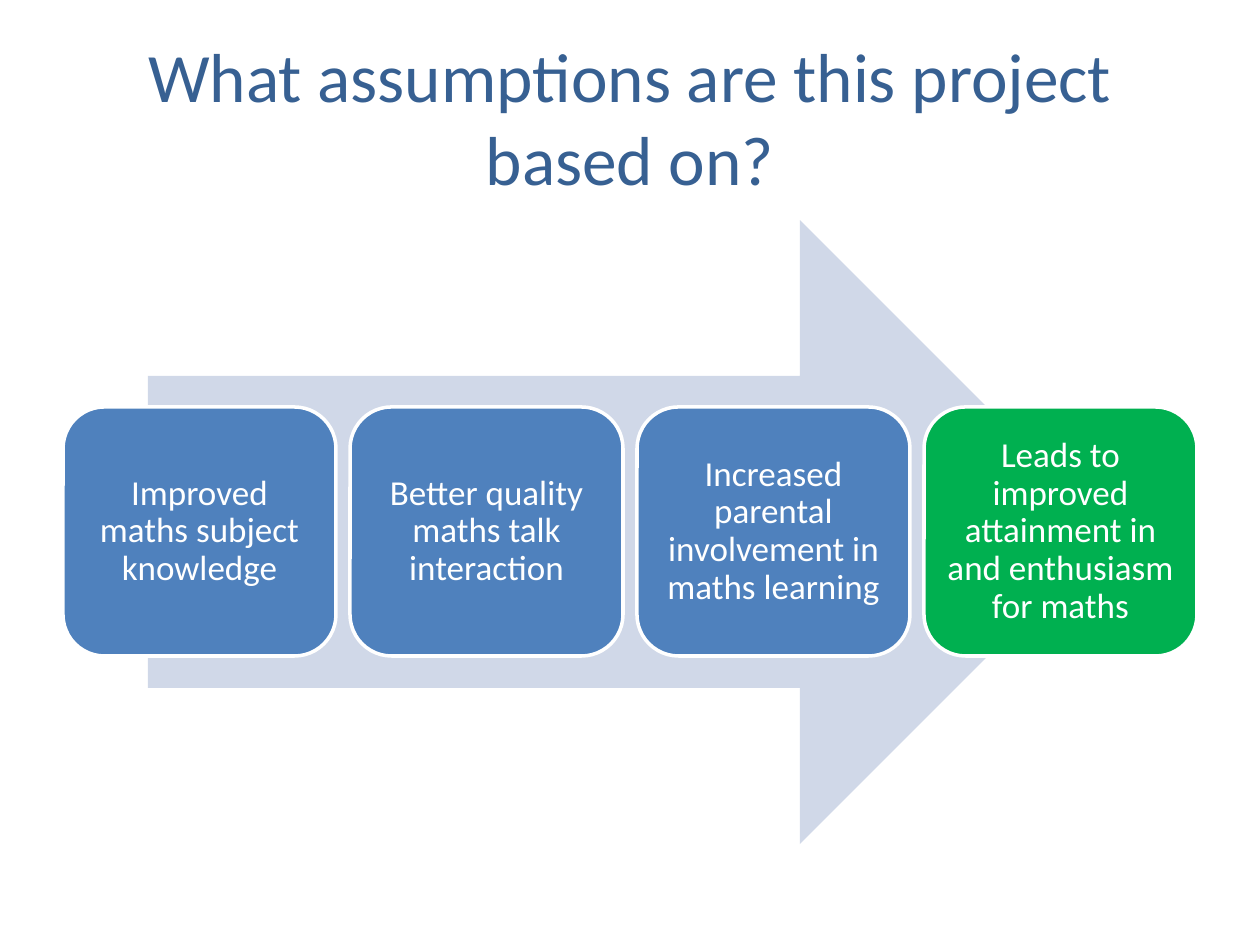
from dataclasses import dataclass

from pptx import Presentation
from pptx.dml.color import RGBColor
from pptx.enum.shapes import MSO_SHAPE as Shape
from pptx.enum.text import MSO_ANCHOR as Anchor, PP_ALIGN as Align
from pptx.util import Emu, Pt

EMU_PER_PX = 914400 / 126


@dataclass(frozen=True)
class Theme:
    font: str = "Calibri"
    title_size: float = 39.6
    step_size: float = 20
    outline_width: float = 2
    title: str = "376092"
    arrow: str = "D0D8E8"
    step: str = "4F81BD"
    outcome: str = "00B050"
    white: str = "FFFFFF"


THEME = Theme()

STEPS = [
    ("Improved maths subject knowledge", THEME.step),
    ("Better quality maths talk interaction", THEME.step),
    ("Increased parental involvement in maths learning", THEME.step),
    ("Leads to improved attainment in and enthusiasm for maths", THEME.outcome),
]
STEP_LEFT, STEP_TOP = 63, 407
STEP_WIDTH, STEP_HEIGHT = 273, 249
STEP_PITCH = 287
STEP_MARGIN = 10


def px(length):
    return Emu(round(length * EMU_PER_PX))


def rgb(value):
    return RGBColor.from_string(value)


def write_text(shape, text, size, color):
    """Put one centred paragraph in the middle of a shape."""
    frame = shape.text_frame
    frame.word_wrap = True
    frame.vertical_anchor = Anchor.MIDDLE
    paragraph = frame.paragraphs[0]
    paragraph.text = text
    paragraph.alignment = Align.CENTER
    paragraph.font.name = THEME.font
    paragraph.font.size = Pt(size)
    paragraph.font.color.rgb = rgb(color)
    return frame


def add_filled_shape(slide, kind, box, fill):
    shape = slide.shapes.add_shape(kind, *map(px, box))
    shape.shadow.inherit = False
    shape.fill.solid()
    shape.fill.fore_color.rgb = rgb(fill)
    shape.line.fill.background()
    return shape


def add_title(slide, text):
    title = slide.shapes.add_textbox(px(63), px(38), px(1134), px(157))
    write_text(title, text, THEME.title_size, THEME.title)


def add_step(slide, index, text, fill):
    box = (STEP_LEFT + index * STEP_PITCH, STEP_TOP, STEP_WIDTH, STEP_HEIGHT)
    step = add_filled_shape(slide, Shape.ROUNDED_RECTANGLE, box, fill)
    step.line.color.rgb = rgb(THEME.white)
    step.line.width = Pt(THEME.outline_width)
    frame = write_text(step, text, THEME.step_size, THEME.white)
    frame.paragraphs[0].line_spacing = 0.9
    frame.margin_left = frame.margin_right = px(STEP_MARGIN)
    frame.margin_top = frame.margin_bottom = px(STEP_MARGIN)


def main():
    presentation = Presentation()
    presentation.slide_width, presentation.slide_height = px(1260), px(945)
    slide = presentation.slides.add_slide(presentation.slide_layouts[6])

    # Heading
    add_title(slide, "What assumptions are this project based on?")

    # Arrow behind the steps
    add_filled_shape(slide, Shape.RIGHT_ARROW, (148, 220, 964, 624), THEME.arrow)

    # Steps leading to the outcome
    for index, (text, fill) in enumerate(STEPS):
        add_step(slide, index, text, fill)

    presentation.save("out.pptx")


if __name__ == "__main__":
    main()
